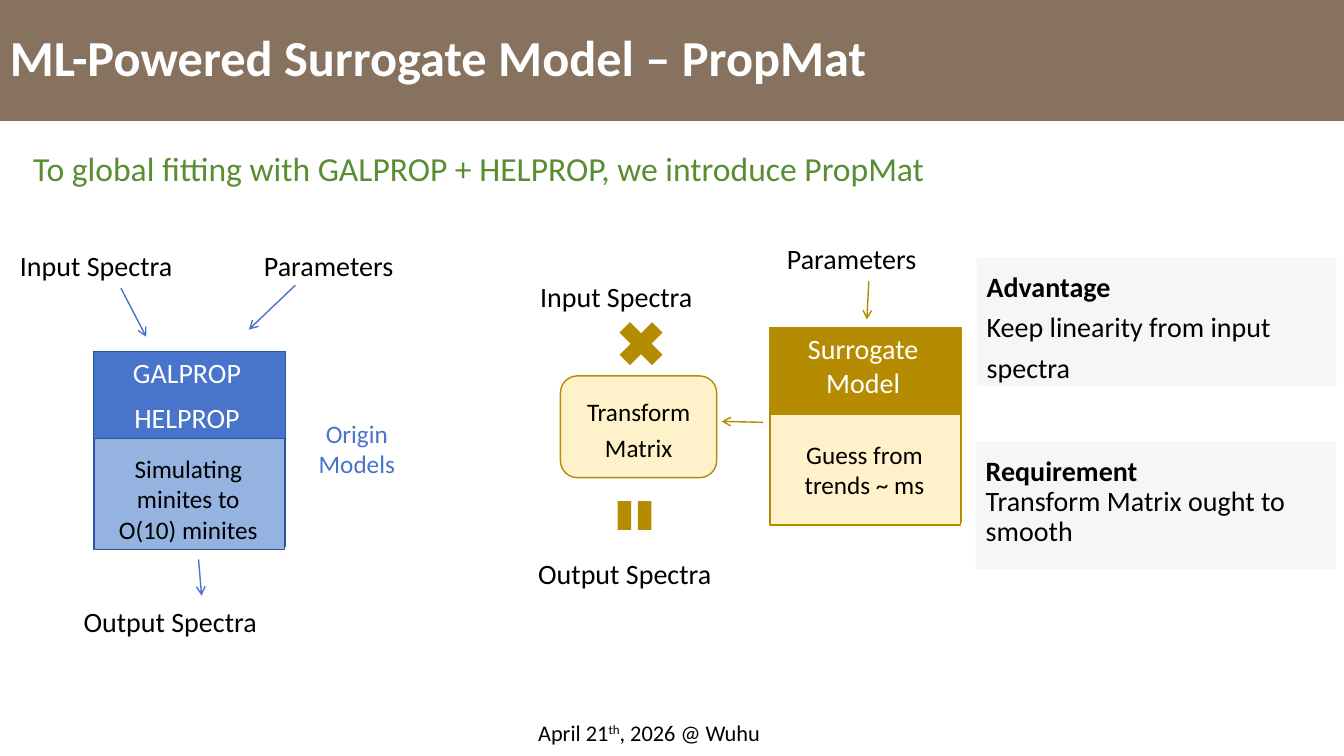
from lxml import etree
from pptx import Presentation
from pptx import util as u
from pptx.dml.color import RGBColor
from pptx.enum import shapes, text
from pptx.oxml import ns

COLORS = {
    "brown": "86725F", "green": "588E31", "black": "000000", "white": "FFFFFF",
    "blue": "4874CB", "navy": "2E54A1", "sky": "94B3E1",
    "gold": "B58B01", "cream": "FFF2CA", "gray": "F6F6F6",
}
FONT = "Calibri"
CENTER = text.PP_ALIGN.CENTER
LEFT = text.PP_ALIGN.LEFT
RECTANGLE = shapes.MSO_SHAPE.RECTANGLE
LABEL_HEIGHT = 31.7


def rgb(name):
    return RGBColor.from_string(COLORS[name])


def points(*lengths):
    return [u.Pt(length) for length in lengths]


def format_paragraph(paragraph, size, color, align=LEFT, spacing=None, bold=False):
    paragraph.alignment = align
    if spacing:
        paragraph.line_spacing = spacing
    for run in paragraph.runs:
        run.font.name = FONT
        run.font.size = u.Pt(size)
        run.font.bold = bold
        run.font.color.rgb = rgb(color)


def add_text(slide, box, words, size=20, color="black", align=LEFT, spacing=None,
             bold=False, anchor=text.MSO_ANCHOR.TOP):
    shape = slide.shapes.add_textbox(*points(*box))
    frame = shape.text_frame
    frame.word_wrap = True
    frame.vertical_anchor = anchor
    frame.text = words
    for paragraph in frame.paragraphs:
        format_paragraph(paragraph, size, color, align, spacing, bold)
    return shape


def add_block(slide, kind, box, fill, line=None):
    shape = slide.shapes.add_shape(kind, *points(*box))
    shape.shadow.inherit = False
    shape.fill.solid()
    shape.fill.fore_color.rgb = rgb(fill)
    if line:
        shape.line.color.rgb = rgb(line)
        shape.line.width = u.Pt(1)
    else:
        shape.line.fill.background()
    return shape


def add_arrow(slide, color, start, end):
    connector = slide.shapes.add_connector(
        shapes.MSO_CONNECTOR.STRAIGHT, *points(*start, *end))
    connector.line.color.rgb = rgb(color)
    connector.line.width = u.Pt(1)
    etree.SubElement(connector.line._get_or_add_ln(), ns.qn("a:tailEnd"), type="arrow")
    etree.SubElement(connector._element.spPr, ns.qn("a:effectLst"))


def add_header(slide, left, top, width, height):
    add_block(slide, RECTANGLE, (left, top, width, height), "brown")
    add_text(slide, (left, top, width - 87, height),
             "ML-Powered Surrogate Model – PropMat", 36, "white",
             spacing=0.9, bold=True, anchor=text.MSO_ANCHOR.MIDDLE)


def add_footer(slide, left, top, width, height):
    shape = add_text(slide, (left, top, width, height), "April 21", 16)
    paragraph = shape.text_frame.paragraphs[0]
    ordinal = paragraph.add_run()
    ordinal.text = "th"
    paragraph.add_run().text = ", 2026 @ Wuhu"
    format_paragraph(paragraph, 16, "black")
    ordinal.font._element.set("baseline", "30000")


def add_model(slide, left, top, titles, body, body_top, fill, body_fill, line):
    width = 136.8
    add_block(slide, RECTANGLE, (left, top, width, 139), fill, line)
    for row, title in enumerate(titles):
        add_text(slide, (left + 4.3, top - 0.7 + row * LABEL_HEIGHT, 124.6, LABEL_HEIGHT),
                 title, color="white", align=CENTER)
    add_block(slide, RECTANGLE, (left, top + 62, width - 0.7, 79.2), body_fill, line)
    add_text(slide, (left - 2, top + body_top, 139, 72), body, 18, align=CENTER)


def add_origin_models(slide, left, top):
    add_text(slide, (left, top, 158.4, LABEL_HEIGHT), "Input Spectra")
    add_text(slide, (left + 174.2, top, 131, LABEL_HEIGHT), "Parameters")
    add_model(slide, left + 59.8, top + 77, ["GALPROP", "HELPROP"],
              "Simulating minites to\nO(10) minites", 69.1, "blue", "sky", "navy")
    add_text(slide, (left + 204.5, top + 121, 86.4, 51), "Origin Models",
             18, "blue", CENTER)
    add_text(slide, (left + 45.4, top + 254.2, 171.4, LABEL_HEIGHT), "Output Spectra")
    for start, end in [((79.2, 31.7), (97.2, 66.3)),
                       ((203.8, 29.5), (170.6, 61.2)),
                       ((134.6, 225.4), (136.8, 251.3))]:
        add_arrow(slide, "blue", (left + start[0], top + start[1]),
                  (left + end[0], top + end[1]))


def add_matrix_column(slide, left, top):
    add_text(slide, (left + 1.4, top, 158.4, LABEL_HEIGHT), "Input Spectra")
    add_block(slide, shapes.MSO_SHAPE.MATH_MULTIPLY,
              (left + 58.3, top + 27.4, 44.6, 44.6), "gold")
    add_block(slide, shapes.MSO_SHAPE.ROUNDED_RECTANGLE,
              (left + 23, top + 72.7, 111.6, 72.7), "cream", "gold")
    add_text(slide, (left + 20.2, top + 79.2, 117.4, 59.8), "Transform\nMatrix",
             18, align=CENTER, spacing=1.2)
    equals = add_block(slide, shapes.MSO_SHAPE.MATH_EQUAL,
                       (left + 61.9, top + 151.9, 28.1, 41), "gold")
    equals.rotation = 90
    add_text(slide, (left, top + 198, 171.4, LABEL_HEIGHT), "Output Spectra")


def add_surrogate(slide, left, top):
    add_text(slide, (left + 5, top, 131, LABEL_HEIGHT), "Parameters")
    add_model(slide, left, top + 64.8, ["Surrogate\nModel"],
              "Guess from\ntrends ~ ms", 76.3, "gold", "cream", "gold")
    add_arrow(slide, "gold", (left + 70.6, top + 31.7), (left + 69.2, top + 59))
    add_arrow(slide, "gold", (left - 5, top + 132.5), (left - 34.5, top + 131.8))


def add_note(slide, left, top, heading, detail, detail_spacing):
    shape = add_block(slide, RECTANGLE, (left, top, 257, 91.4), "gray")
    frame = shape.text_frame
    frame.word_wrap = True
    frame.vertical_anchor = text.MSO_ANCHOR.TOP
    frame.text = f"{heading}\n{detail}"
    first, second = frame.paragraphs
    format_paragraph(first, 20, "black", spacing=1.2, bold=True)
    format_paragraph(second, 20, "black", spacing=detail_spacing)


def main():
    presentation = Presentation()
    presentation.slide_width = u.Pt(960)
    presentation.slide_height = u.Pt(540)
    slide = presentation.slides.add_slide(presentation.slide_layouts[6])
    add_header(slide, 0, 0, 960, 86.4)
    add_footer(slide, 377.3, 509.8, 212.4, 26.6)
    add_text(slide, (16.6, 102.2, 814.3, 36),
             "To global fitting with GALPROP + HELPROP, we introduce PropMat", 24, "green")
    add_origin_models(slide, 7.2, 174.2)
    add_matrix_column(slide, 377.3, 195.8)
    add_surrogate(slide, 550, 169.2)
    add_note(slide, 697.7, 184.3, "Advantage", "Keep linearity from input spectra", 1.2)
    add_note(slide, 697, 315.4, "Requirement", "Transform Matrix ought to smooth", 0.9)
    presentation.save("out.pptx")


if __name__ == "__main__":
    main()
